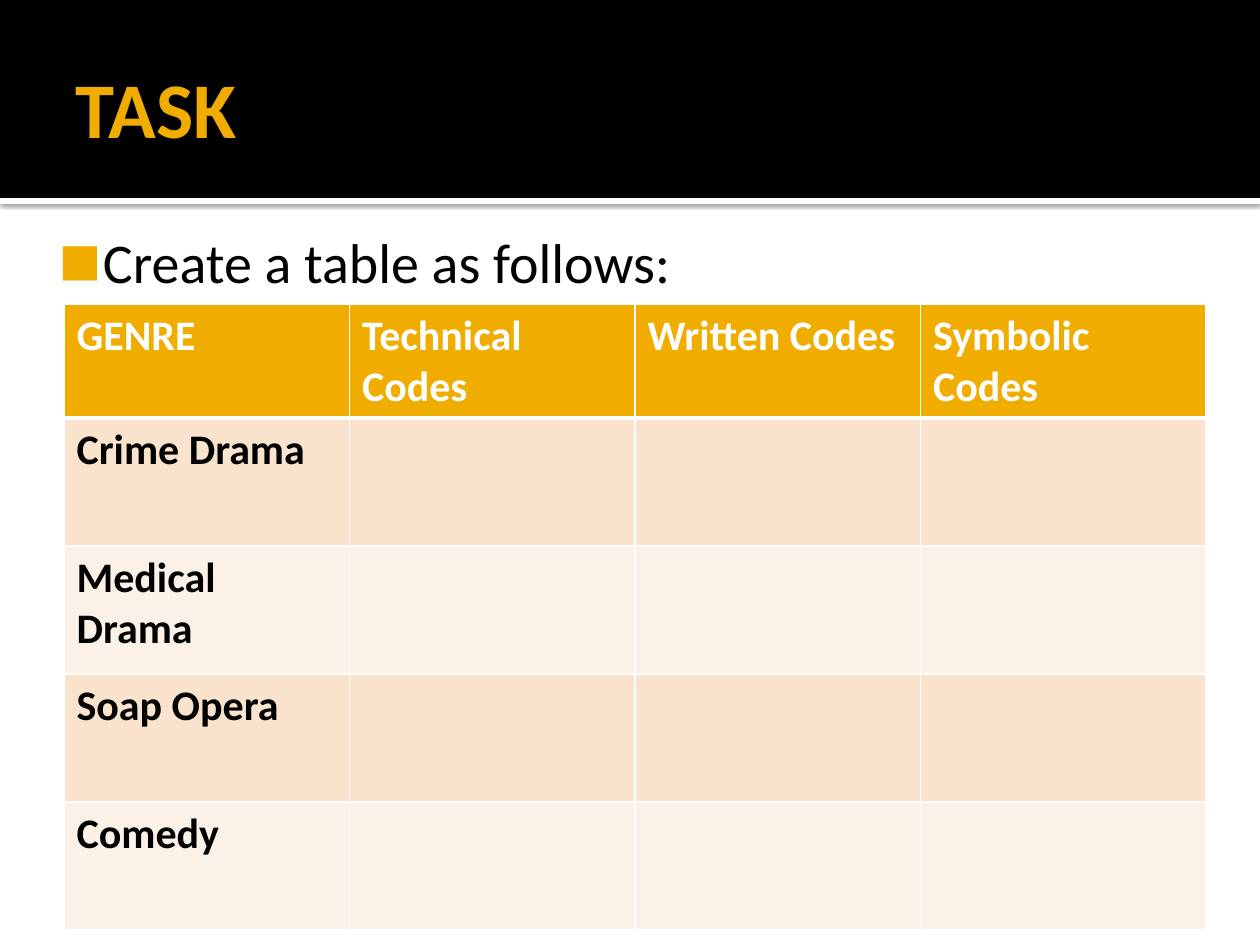
from dataclasses import dataclass

from lxml.etree import SubElement
from pptx import Presentation
from pptx.dml.color import RGBColor as RGB
from pptx.enum.shapes import MSO_SHAPE as SHAPE
from pptx.enum.text import MSO_ANCHOR as ANCHOR, PP_ALIGN as ALIGN
from pptx.oxml.ns import qn
from pptx.util import Emu, Pt

EMU_PER_PX = 914400 / 126


@dataclass(frozen=True)
class Theme:
    font: str = "Calibri"
    accent: str = "F0AD00"
    dark: str = "000000"
    light: str = "FFFFFF"
    bands: tuple = ("F9E3CC", "FCF1E7")
    title_size: int = 45
    body_size: int = 32
    cell_size: int = 24


THEME = Theme()
HEADERS = ["GENRE", "Technical Codes", "Written Codes", "Symbolic Codes"]
GENRES = ["Crime Drama", "Medical Drama", "Soap Opera", "Comedy"]


def px(n):
    return Emu(round(n * EMU_PER_PX))


def rgb(color):
    return RGB.from_string(color)


def add_run(p, text, size, color, bold=False):
    r = p.add_run()
    r.text = text
    r.font.name = THEME.font
    r.font.size = Pt(size)
    r.font.bold = bold
    r.font.color.rgb = rgb(color)


def set_insets(tf, left, top, right, bottom):
    tf.margin_left, tf.margin_top = px(left), px(top)
    tf.margin_right, tf.margin_bottom = px(right), px(bottom)


def add_rect(slide, x, y, w, h, color):
    sp = slide.shapes.add_shape(SHAPE.RECTANGLE, px(x), px(y), px(w), px(h))
    sp.shadow.inherit = False
    sp.fill.solid()
    sp.fill.fore_color.rgb = rgb(color)
    sp.line.fill.background()
    return sp


def add_shadow(sp):
    effects = sp.element.spPr.find(qn("a:effectLst"))
    shadow = SubElement(effects, qn("a:outerShdw"), blurRad=str(Pt(2.5)),
                        dist=str(Pt(0.8)), dir="5400000", rotWithShape="0")
    color = SubElement(shadow, qn("a:srgbClr"), val=THEME.dark)
    SubElement(color, qn("a:alpha"), val="60000")


def set_bullet(p, char, color, percent, margin, indent):
    pPr = p._p.get_or_add_pPr()
    pPr.set("marL", str(px(margin)))
    pPr.set("indent", str(px(indent)))
    bu_color = SubElement(pPr, qn("a:buClr"))
    SubElement(bu_color, qn("a:srgbClr"), val=color)
    SubElement(pPr, qn("a:buSzPct"), val=str(percent * 1000))
    SubElement(pPr, qn("a:buFont"), typeface=THEME.font)
    SubElement(pPr, qn("a:buChar"), char=char)


def set_borders(cell, bottom):
    tcPr = cell._tc.get_or_add_tcPr()
    widths = {"a:lnL": 1, "a:lnR": 1, "a:lnT": 1, "a:lnB": bottom}
    for i, (tag, width) in enumerate(widths.items()):
        ln = SubElement(tcPr, qn(tag), w=str(Pt(width)))
        fill = SubElement(ln, qn("a:solidFill"))
        SubElement(fill, qn("a:srgbClr"), val=THEME.light)
        tcPr.insert(i, ln)  # borders come before the cell fill


def build_header(slide, x, y, w, h):
    # White strip with a soft shadow, below the black band
    add_shadow(add_rect(slide, x, y + h, w, 6, THEME.light))
    add_rect(slide, x, y, w, h, THEME.dark)

    # Title, in front of the band
    title = slide.shapes.title
    slide.shapes.element.append(title.element)
    title.left, title.top = px(x + 63), px(y + 21)
    title.width, title.height = px(w - 126), px(h - 25)
    tf = title.text_frame
    tf.word_wrap = True
    tf.vertical_anchor = ANCHOR.MIDDLE
    set_insets(tf, 13, 6, 6, 6)
    p = tf.paragraphs[0]
    p.alignment = ALIGN.LEFT
    add_run(p, "TASK", THEME.title_size, THEME.accent, bold=True)


def build_body(slide, x, y, w, h):
    tf = slide.shapes.add_textbox(px(x), px(y), px(w), px(h)).text_frame
    tf.word_wrap = True
    set_insets(tf, 8, 13, 13, 6)
    p = tf.paragraphs[0]
    set_bullet(p, "■", THEME.accent, 80, margin=60, indent=-44)
    add_run(p, "Create a table as follows:", THEME.body_size, THEME.dark)


def build_table(slide, x, y, w, header_h, row_h):
    rows = [HEADERS] + [[g] + [""] * (len(HEADERS) - 1) for g in GENRES]
    h = header_h + row_h * len(GENRES)
    table = slide.shapes.add_table(len(rows), len(HEADERS),
                                   px(x), px(y), px(w), px(h)).table
    for col in table.columns:
        col.width = px(w / len(HEADERS))

    for i, texts in enumerate(rows):
        is_header = i == 0
        table.rows[i].height = px(header_h if is_header else row_h)
        fill = THEME.accent if is_header else THEME.bands[(i - 1) % 2]
        color = THEME.light if is_header else THEME.dark
        for j, text in enumerate(texts):
            cell = table.cell(i, j)
            cell.fill.solid()
            cell.fill.fore_color.rgb = rgb(fill)
            set_borders(cell, bottom=3 if is_header else 1)
            if text:
                add_run(cell.text_frame.paragraphs[0], text,
                        THEME.cell_size, color, bold=True)


def main():
    prs = Presentation()
    prs.slide_width, prs.slide_height = px(1260), px(945)
    slide = prs.slides.add_slide(prs.slide_layouts[5])
    build_header(slide, 0, 0, 1260, 198)
    build_body(slide, 35, 214, 1134, 638)
    build_table(slide, 64, 304, 1142, header_h=114, row_h=128)
    prs.save("out.pptx")


if __name__ == "__main__":
    main()
